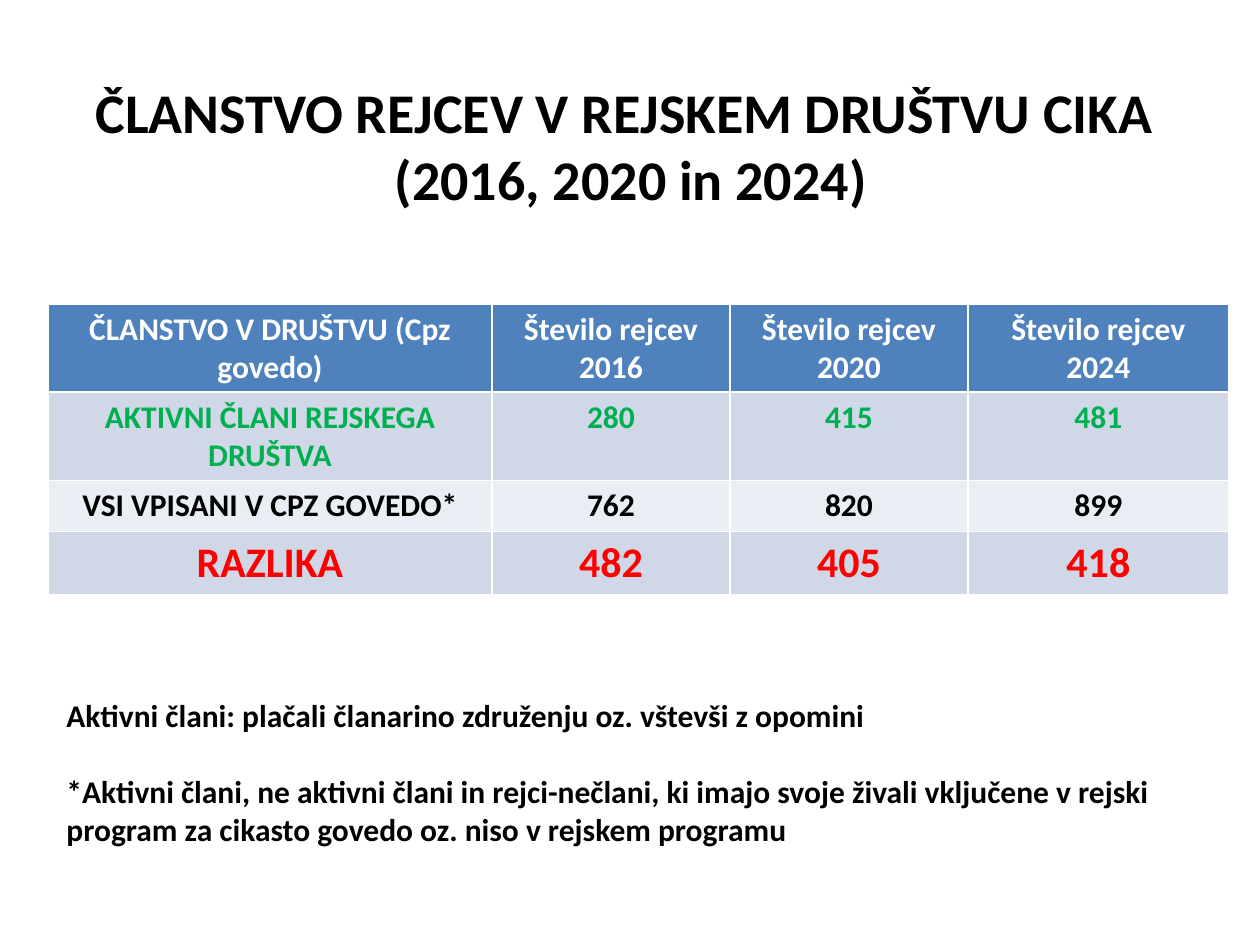
from typing import NamedTuple

from pptx import Presentation
from pptx.dml.color import RGBColor
from pptx.enum.text import MSO_ANCHOR, PP_ALIGN
from pptx.util import Emu, Pt

PX = 914400 / 126
FONT = "Calibri"
COLORS = {
    "black": "000000",
    "white": "FFFFFF",
    "green": "00B050",
    "red": "FF0000",
    "header": "4F81BD",
    "band": "D0D8E8",
    "light": "E9EDF4",
}


class Box(NamedTuple):
    left: int
    top: int
    width: int
    height: int


class MemberRow(NamedTuple):
    cells: tuple[str, ...]
    fill: str
    color: str
    size: int = 18


TITLE_BOX = Box(64, 66, 1134, 157)
TABLE_BOX = Box(48, 304, 1181, 204)
NOTES_BOX = Box(54, 690, 1125, 165)
COLUMN_WIDTHS = (444, 238, 238, 261)
ROW_HEIGHT = 51

MEMBER_ROWS = (
    MemberRow(("ČLANSTVO V DRUŠTVU (Cpz govedo)", "Število rejcev 2016",
               "Število rejcev 2020", "Število rejcev 2024"), "header", "white"),
    MemberRow(("AKTIVNI ČLANI REJSKEGA DRUŠTVA", "280", "415", "481"), "band", "green"),
    MemberRow(("VSI VPISANI V CPZ GOVEDO*", "762", "820", "899"), "light", "black"),
    MemberRow(("RAZLIKA", "482", "405", "418"), "band", "red", 24),
)


def px(length: int) -> Emu:
    return Emu(round(length * PX))


def place(box: Box) -> list[Emu]:
    return [px(length) for length in box]


def write(paragraph, text: str, *, size: int = 18, color: str = "black",
          align=PP_ALIGN.LEFT, before: int = 0) -> None:
    """Fill a paragraph with bold text; a vertical tab breaks the line."""
    paragraph.text = text
    paragraph.alignment = align
    paragraph.space_before = Pt(before)
    for run in paragraph.runs:
        run.font.name = FONT
        run.font.size = Pt(size)
        run.font.bold = True
        run.font.color.rgb = RGBColor.from_string(COLORS[color])


def add_text_frame(slide, box: Box):
    frame = slide.shapes.add_textbox(*place(box)).text_frame
    frame.word_wrap = True
    return frame


def add_member_table(slide, box: Box, rows: tuple[MemberRow, ...]) -> None:
    table = slide.shapes.add_table(len(rows), len(COLUMN_WIDTHS), *place(box)).table
    for column, width in zip(table.columns, COLUMN_WIDTHS):
        column.width = px(width)
    for table_row, member_row in zip(table.rows, rows):
        table_row.height = px(ROW_HEIGHT)
        for cell, text in zip(table_row.cells, member_row.cells):
            cell.fill.solid()
            cell.fill.fore_color.rgb = RGBColor.from_string(COLORS[member_row.fill])
            write(cell.text_frame.paragraphs[0], text, size=member_row.size,
                  color=member_row.color, align=PP_ALIGN.CENTER)


def main() -> None:
    presentation = Presentation()
    presentation.slide_width, presentation.slide_height = px(1260), px(945)
    slide = presentation.slides.add_slide(presentation.slide_layouts[6])

    # Title
    title = add_text_frame(slide, TITLE_BOX)
    title.vertical_anchor = MSO_ANCHOR.MIDDLE
    write(title.paragraphs[0], "ČLANSTVO REJCEV V REJSKEM DRUŠTVU CIKA \v(2016, 2020 in 2024)",
          size=32, align=PP_ALIGN.CENTER)

    # Membership by year
    add_member_table(slide, TABLE_BOX, MEMBER_ROWS)

    # Notes under the table
    notes = add_text_frame(slide, NOTES_BOX)
    write(notes.paragraphs[0], "Aktivni člani: plačali članarino združenju oz. vštevši z opomini")
    write(notes.add_paragraph(),
          "*Aktivni člani, ne aktivni člani in rejci-nečlani, ki imajo svoje živali vključene v rejski",
          before=22)
    write(notes.add_paragraph(), "program za cikasto govedo oz. niso v rejskem programu")

    presentation.save("out.pptx")


if __name__ == "__main__":
    main()
